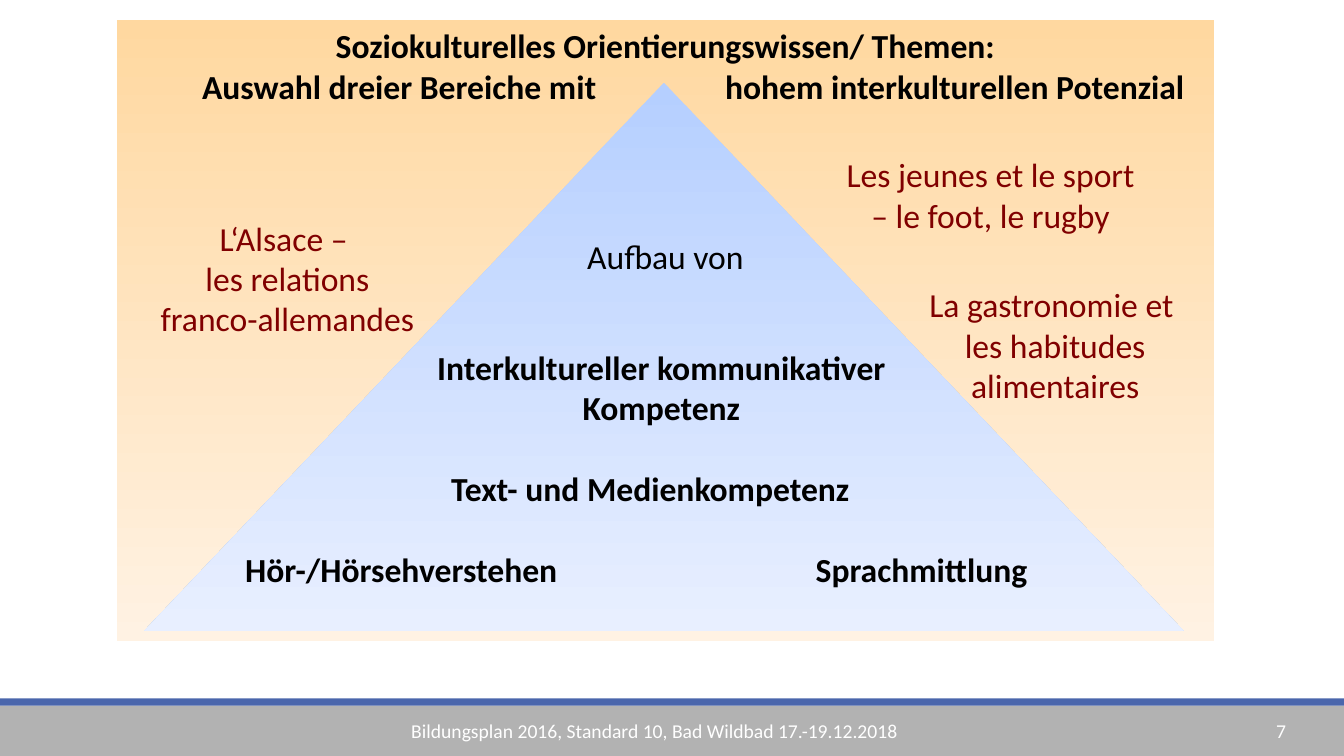
from pptx import Presentation
from pptx.dml.color import RGBColor
from pptx.enum.shapes import MSO_SHAPE
from pptx.enum.text import MSO_ANCHOR, PP_ALIGN
from pptx.util import Inches, Pt

COLORS = {
    "black": "000000",
    "white": "FFFFFF",
    "wine": "800000",
    "gray": "B2B2B2",
    "blue": "4A66AC",
    "panel_top": "FFD8A0",
    "panel_bottom": "FFF2E3",
    "pyramid_top": "B5CFFF",
    "pyramid_bottom": "E8EFFF",
}


class SlideBuilder:
    """Draws shapes and texts on one slide in a shared style."""

    font = "Calibri"
    size = 24

    def __init__(self, slide):
        self.slide = slide

    def color(self, name):
        return RGBColor.from_string(COLORS[name])

    def shape(self, kind, box, *fills):
        sp = self.slide.shapes.add_shape(kind, *map(Inches, box))
        sp.shadow.inherit = False
        sp.line.fill.background()
        if len(fills) == 1:
            sp.fill.solid()
            sp.fill.fore_color.rgb = self.color(fills[0])
        else:
            sp.fill.gradient()
            sp.fill.gradient_angle = 270
            for stop, name in zip(sp.fill.gradient_stops, fills):
                stop.color.rgb = self.color(name)
        return sp

    def set_text(self, sp, text, color="black", bold=False, size=None,
                 align=PP_ALIGN.CENTER):
        tf = sp.text_frame
        tf.word_wrap = True
        tf.vertical_anchor = MSO_ANCHOR.TOP
        tf.text = text
        for p in tf.paragraphs:
            p.alignment = align
            for r in p.runs:
                r.font.name = self.font
                r.font.size = Pt(size or self.size)
                r.font.bold = bold
                r.font.color.rgb = self.color(color)

    def text(self, box, text, **style):
        sp = self.slide.shapes.add_textbox(*map(Inches, box))
        self.set_text(sp, text, **style)

    def label(self, center, top, text, bold=True):
        width, height = 5, 0.4 * len(text.split("\n")) + 0.1
        self.text((center - width / 2, top - 0.05, width, height), text, bold=bold)


def main():
    prs = Presentation()
    prs.slide_width, prs.slide_height = Inches(13.33), Inches(7.5)
    s = SlideBuilder(prs.slides.add_slide(prs.slide_layouts[6]))

    s.shape(MSO_SHAPE.RECTANGLE, (0, 7, 13.33, 0.5), "gray")
    s.shape(MSO_SHAPE.RECTANGLE, (0, 6.93, 13.33, 0.07), "blue")
    for left, width, text in (
        (3.98, 5.36, "Bildungsplan 2016, Standard 10, Bad Wildbad 17.-19.12.2018"),
        (12.56, 0.77, "7"),
    ):
        s.text((left, 7.08, width, 0.34), text, color="white", size=14,
               align=PP_ALIGN.LEFT)

    panel = s.shape(MSO_SHAPE.RECTANGLE, (1.16, 0.2, 10.88, 6.16),
                    "panel_top", "panel_bottom")
    s.set_text(panel, "Soziokulturelles Orientierungswissen/ Themen:", bold=True)
    s.shape(MSO_SHAPE.ISOSCELES_TRIANGLE, (1.43, 0.82, 10.31, 5.44),
            "pyramid_top", "pyramid_bottom")

    s.label(3.96, 0.65, "Auswahl dreier Bereiche mit")
    s.label(9.47, 0.65, "hohem interkulturellen Potenzial")
    s.label(6.6, 2.34, "Aufbau von", bold=False)
    s.label(6.56, 3.44, "Interkultureller kommunikativer\nKompetenz")
    s.label(6.45, 4.64, "Text- und Medienkompetenz")
    s.label(3.98, 5.45, "Hör-/Hörsehverstehen")
    s.label(9.14, 5.45, "Sprachmittlung")

    for box, topic in (
        ((1.49, 2.11, 2.72, 1.31), "L‘Alsace – \nles relations franco-allemandes"),
        ((8.22, 1.48, 3.21, 0.91), "Les jeunes et le sport – le foot, le rugby"),
        ((9.02, 2.77, 2.89, 1.31), "La gastronomie et \nles habitudes alimentaires"),
    ):
        s.text(box, topic, color="wine")

    prs.save("out.pptx")


if __name__ == "__main__":
    main()
